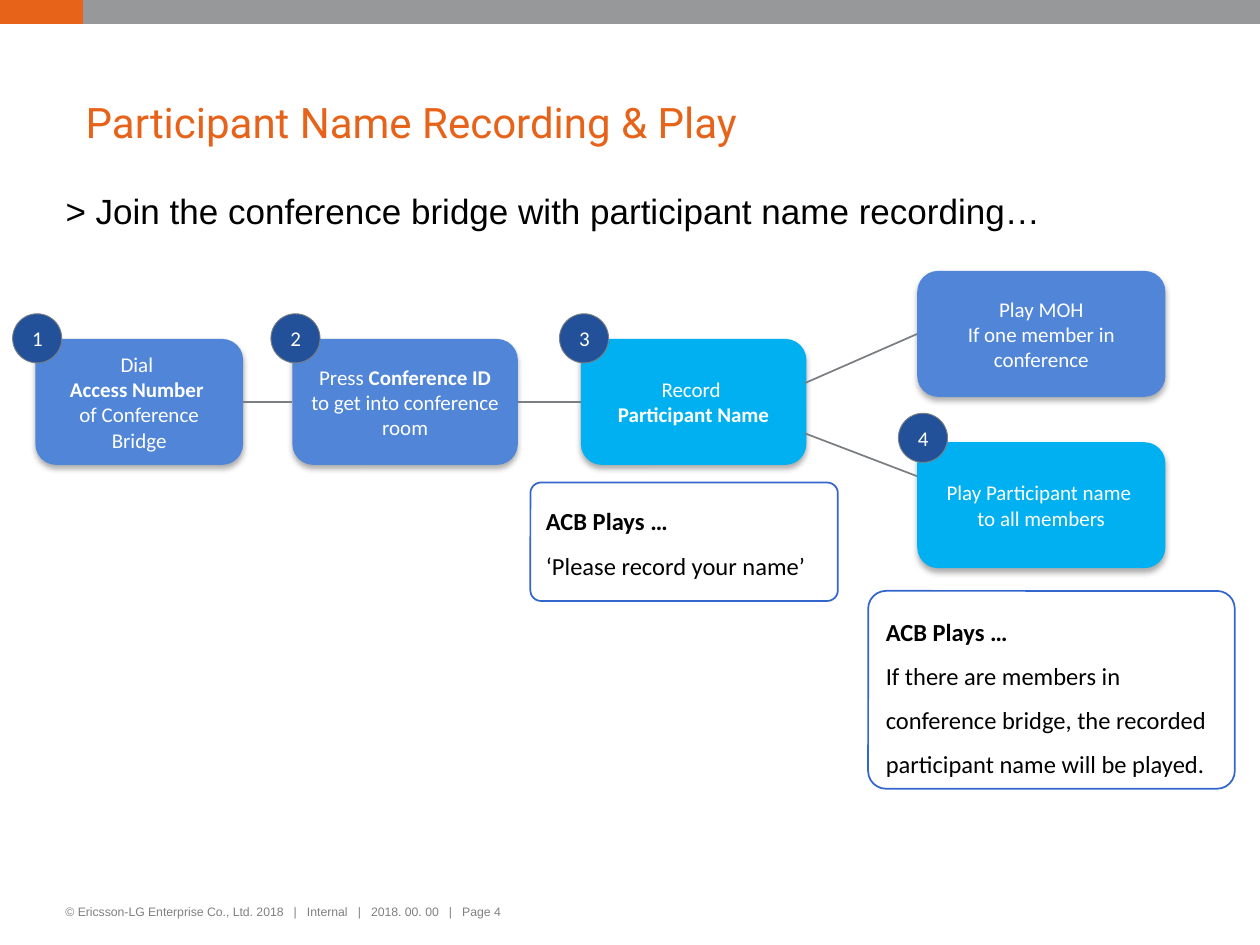
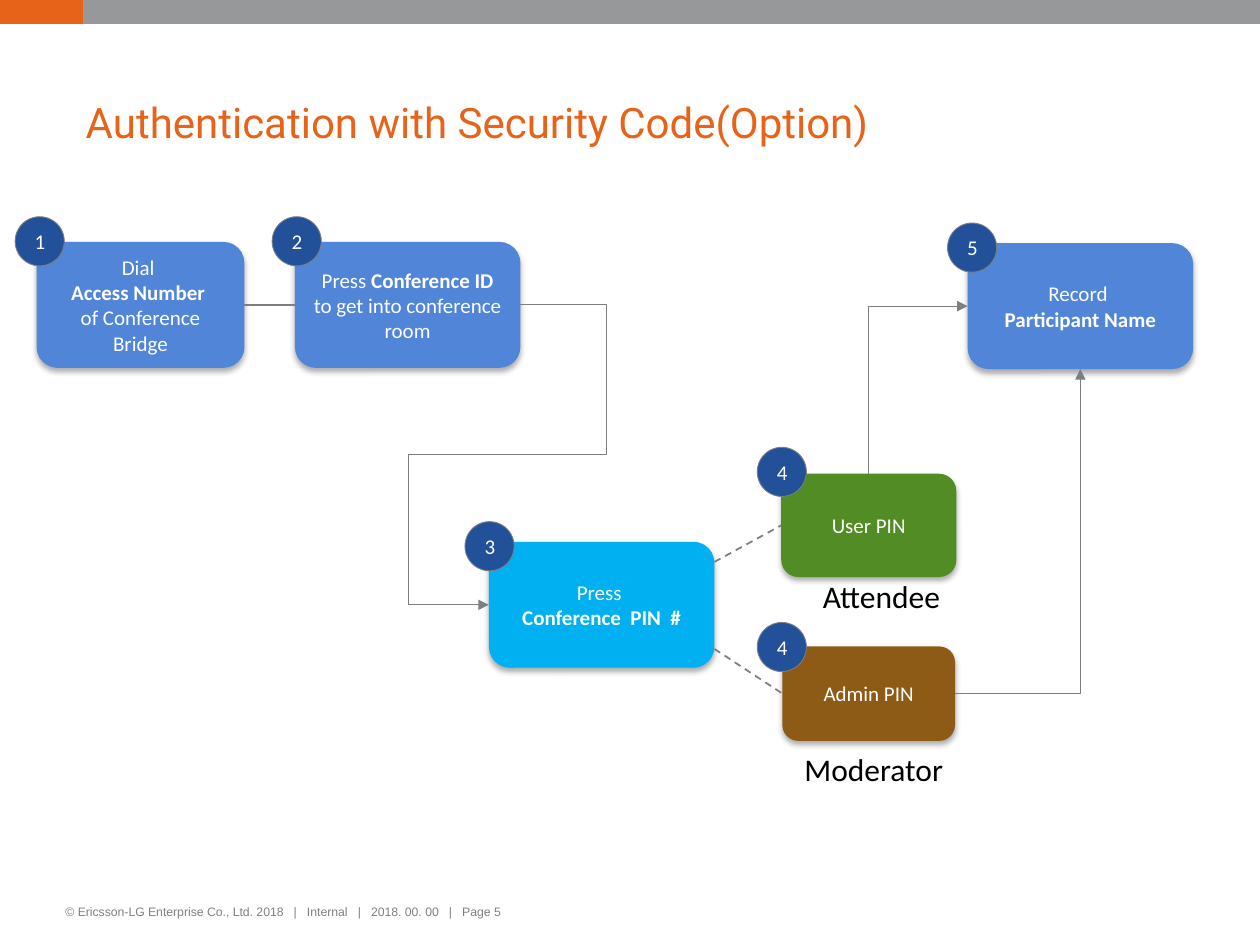
from lxml import etree
from pptx import Presentation
from pptx.dml.color import RGBColor
from pptx.enum.dml import MSO_LINE
from pptx.enum.shapes import MSO_CONNECTOR, MSO_SHAPE
from pptx.enum.text import MSO_ANCHOR, MSO_AUTO_SIZE, PP_ALIGN
from pptx.oxml.ns import qn
from pptx.util import Inches, Pt

RECT, ROUND, OVAL = MSO_SHAPE.RECTANGLE, MSO_SHAPE.ROUNDED_RECTANGLE, MSO_SHAPE.OVAL
LINE, ELBOW = MSO_CONNECTOR.STRAIGHT, MSO_CONNECTOR.ELBOW
LEFT, CENTER = PP_ALIGN.LEFT, PP_ALIGN.CENTER
TOP, MIDDLE = MSO_ANCHOR.TOP, MSO_ANCHOR.MIDDLE
NONE, DASH = MSO_AUTO_SIZE.NONE, MSO_LINE.DASH

ORANGE, GRAY, WIRE, FOOT = "E66319", "96989A", "7B7E82", "808080"
BLUE, CYAN, NAVY, EDGE = "5085D7", "00B0F0", "235199", "3366CC"
GREEN, BROWN, WHITE, BLACK = "528C24", "8D5B15", "FFFFFF", "000000"

FOOTER = "© Ericsson-LG Enterprise Co., Ltd. 2018   |   Internal   |   2018. 00. 00   |   Page {}"
BANDS = [((0, 0, 0.66, 0.19), ORANGE), ((0.66, 0, 9.34, 0.19), GRAY)]
DIAL = ["Dial ", "*Access Number *", "of Conference Bridge"]
PRESS = ["Press *Conference ID *to get into conference room"]
RECORD = ["Record ", "*Participant Name*"]
BADGE = 0.39

SLIDES = [
    {
        "page": 4,
        "layout": 1,
        "title": "Participant Name Recording & Play",
        "lead": "> Join the conference bridge with participant name recording…",
        "cards": {
            "dial": ((0.28, 2.69, 1.65, 1), BLUE, DIAL),
            "press": ((2.32, 2.69, 1.79, 1), BLUE, PRESS),
            "record": ((4.61, 2.69, 1.79, 1), CYAN, RECORD),
            "music": ((7.28, 2.15, 1.97, 1), BLUE,
                      ["Play MOH", "If one member in conference"]),
            "play": ((7.28, 3.51, 1.97, 1), CYAN,
                     ["Play Participant name ", "to all members"]),
        },
        "links": [
            {"start": ("dial", 3), "end": ("press", 1)},
            {"start": ("press", 3), "end": ("record", 1)},
            {"start": (6.39, 3.04), "end": ("music", 1)},
            {"start": (6.39, 3.44), "end": (7.28, 3.78)},
        ],
        "badges": [(1, 0.1, 2.49), (2, 2.15, 2.49), (3, 4.44, 2.49), (4, 7.13, 3.28)],
        "notes": [
            ((4.21, 3.83, 2.44, 0.94), ["*ACB Plays …*", "‘Please record your name’"]),
            ((6.89, 4.69, 2.91, 1.57),
             ["*ACB Plays …*", "If there are members in conference bridge, "
              "the recorded participant name will be played."]),
        ],
        "labels": [],
    },
    {
        "page": 5,
        "layout": 5,
        "title": "Authentication with Security Code(Option)",
        "lead": None,
        "cards": {
            "dial": ((0.29, 1.92, 1.65, 1), BLUE, DIAL),
            "press": ((2.34, 1.92, 1.79, 1), BLUE, PRESS),
            "pin": ((3.88, 4.3, 1.79, 1), CYAN, ["Press ", "*Conference  PIN  #*"]),
            "admin": ((6.21, 5.13, 1.37, 0.75), BROWN, ["Admin PIN"]),
            "user": ((6.2, 3.76, 1.39, 0.82), GREEN, ["User PIN"]),
            "record": ((7.68, 1.93, 1.79, 1), BLUE, RECORD),
        },
        "links": [
            {"start": ("dial", 3), "end": ("press", 1)},
            {"start": (5.67, 4.46), "end": ("user", 1), "dash": DASH},
            {"start": (5.67, 5.15), "end": ("admin", 1), "dash": DASH},
            {"start": ("press", 3), "end": ("pin", 1), "bend": "bentConnector5",
             "adj": (-272000, 50000, 356000), "arrow": "tailEnd"},
            {"start": ("record", 1), "end": ("user", 0), "bend": "bentConnector2",
             "arrow": "headEnd"},
            {"start": ("admin", 3), "end": ("record", 2), "bend": "bentConnector2",
             "arrow": "tailEnd"},
        ],
        "badges": [(1, 0.12, 1.72), (2, 2.16, 1.72), (3, 3.69, 4.14),
                   (4, 6.01, 4.94), (4, 6.01, 3.55), (5, 7.52, 1.77)],
        "notes": [],
        "labels": [((6.42, 4.53, 1.15, 0.4), "Attendee"),
                   ((6.28, 5.9, 1.31, 0.4), "Moderator")],
    },
]


def rgb(code):
    return RGBColor.from_string(code)


def assign(item, values):
    for key, value in values.items():
        setattr(item, key, value)


def inches(box):
    return [Inches(side) for side in box]


def add_xml(parent, tag, **values):
    return etree.SubElement(parent, qn(tag), {k: str(v) for k, v in values.items()})


def write(shape, lines, size, color, name="Calibri", align=CENTER, space=1.0,
          anchor=MIDDLE, pad=(0.1, 0.05), wrap=True):
    frame = shape.text_frame
    side, edge = inches(pad)
    assign(frame, {"word_wrap": wrap, "auto_size": NONE, "vertical_anchor": anchor,
                   "margin_left": side, "margin_right": side,
                   "margin_top": edge, "margin_bottom": edge})
    for i, line in enumerate(lines):
        para = frame.add_paragraph() if i else frame.paragraphs[0]
        assign(para, {"alignment": align, "line_spacing": space, "space_before": Pt(0)})
        for j, part in enumerate(line.split("*")):
            if part:
                run = para.add_run()
                run.text = part
                assign(run.font, {"name": name, "size": Pt(size), "bold": j % 2 == 1})
                run.font.color.rgb = rgb(color)


def add_block(slide, kind, box, fill, edge=None, width=1):
    shape = slide.shapes.add_shape(kind, *inches(box))
    shape.shadow.inherit = False
    shape.fill.solid()
    shape.fill.fore_color.rgb = rgb(fill)
    if edge:
        shape.line.color.rgb = rgb(edge)
        shape.line.width = Pt(width)
    else:
        shape.line.fill.background()
    return shape


def add_card(slide, box, fill, lines):
    card = add_block(slide, ROUND, box, fill)
    effects = card.element.spPr.find(qn("a:effectLst"))
    shade = add_xml(effects, "a:outerShdw", blurRad=Pt(3.5), dist=Pt(2.2),
                    dir=5400000, rotWithShape=0)
    tone = add_xml(shade, "a:srgbClr", val=BLACK)
    add_xml(tone, "a:alpha", val=32000)
    write(card, lines, 12, WHITE)
    return card


def add_link(slide, cards, start, end, dash=None, bend=None, adj=(), arrow=None):
    spots = [(0, 0) if spot[0] in cards else spot for spot in (start, end)]
    link = slide.shapes.add_connector(ELBOW if bend else LINE,
                                      *inches(spots[0] + spots[1]))
    for spot, join in ((start, link.begin_connect), (end, link.end_connect)):
        if spot[0] in cards:
            join(cards[spot[0]], spot[1])
    link.line.color.rgb = rgb(WIRE)
    link.line.width = Pt(0.5 if bend else 1)
    if dash:
        link.line.dash_style = dash
    props = link.element.spPr
    if bend:
        shape = props.find(qn("a:prstGeom"))
        shape.set("prst", bend)
        guides = shape.find(qn("a:avLst"))
        for i, value in enumerate(adj, 1):
            add_xml(guides, "a:gd", name=f"adj{i}", fmla=f"val {value}")
    if arrow:
        add_xml(props.find(qn("a:ln")), "a:" + arrow, type="triangle")
    add_xml(props, "a:effectLst")


def place(shape, box):
    assign(shape, dict(zip(("left", "top", "width", "height"), inches(box))))


def add_frame(slide, page, title, lead):
    for box, fill in BANDS:
        add_block(slide, RECT, box, fill)
    foot = slide.shapes.add_textbox(*inches((0.46, 7.14, 6.64, 0.28)))
    write(foot, [FOOTER.format(page)], 7, FOOT, "Arial", LEFT,
          anchor=TOP, pad=(0.06, 0.04))
    head = slide.shapes.title
    place(head, (0.54, 0.58, 8.92, 0.82))
    write(head, [title], 24, ORANGE, "Roboto", LEFT, 0.9, pad=(0.14, 0.07))
    if lead:
        body = slide.placeholders[1]
        place(body, (0.28, 1.47, 8.9, 0.57))
        props = body.text_frame.paragraphs[0]._p.get_or_add_pPr()
        assign(props, {})
        props.set("marL", str(Inches(0.1)))
        props.set("indent", "0")
        add_xml(props, "a:buNone")
        write(body, [lead], 20, BLACK, "Arial", LEFT, 0.9, TOP, (0.14, 0.07))


def add_slide(deck, data):
    slide = deck.slides.add_slide(deck.slide_layouts[data["layout"]])
    add_frame(slide, data["page"], data["title"], data["lead"])
    cards = {name: add_card(slide, *card) for name, card in data["cards"].items()}
    for link in data["links"]:
        add_link(slide, cards, **link)
    for number, left, top in data["badges"]:
        badge = add_block(slide, OVAL, (left, top, BADGE, BADGE), NAVY, WIRE, 0.5)
        write(badge, [str(number)], 12, WHITE)
    for box, lines in data["notes"]:
        note = add_block(slide, ROUND, box, WHITE, EDGE)
        note.adjustments[0] = 0.09
        write(note, lines, 14, BLACK, align=LEFT, space=1.5, anchor=TOP)
    for box, text in data["labels"]:
        label = slide.shapes.add_textbox(*inches(box))
        write(label, [text], 18, BLACK, anchor=TOP, wrap=False)


def main():
    deck = Presentation()
    assign(deck, {"slide_width": Inches(10), "slide_height": Inches(7.5)})
    for data in SLIDES:
        add_slide(deck, data)
    deck.save("out.pptx")


if __name__ == "__main__":
    main()
